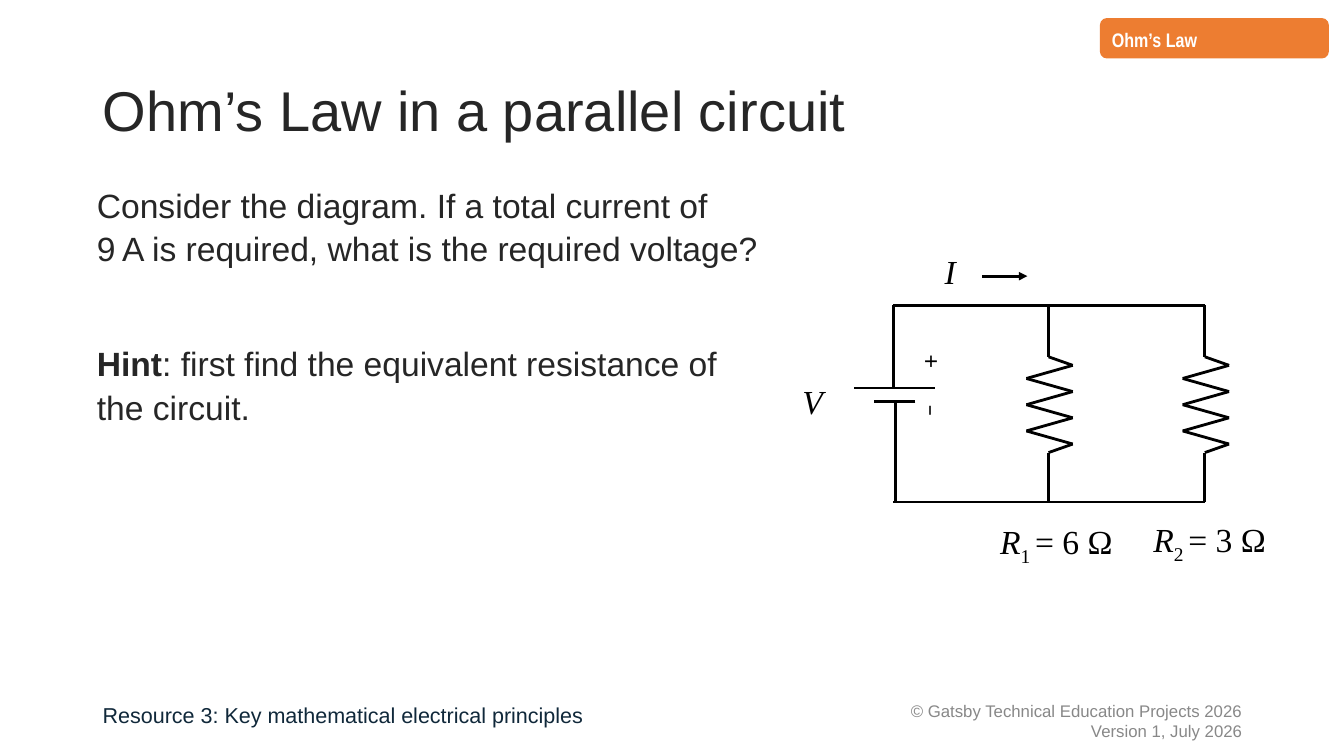
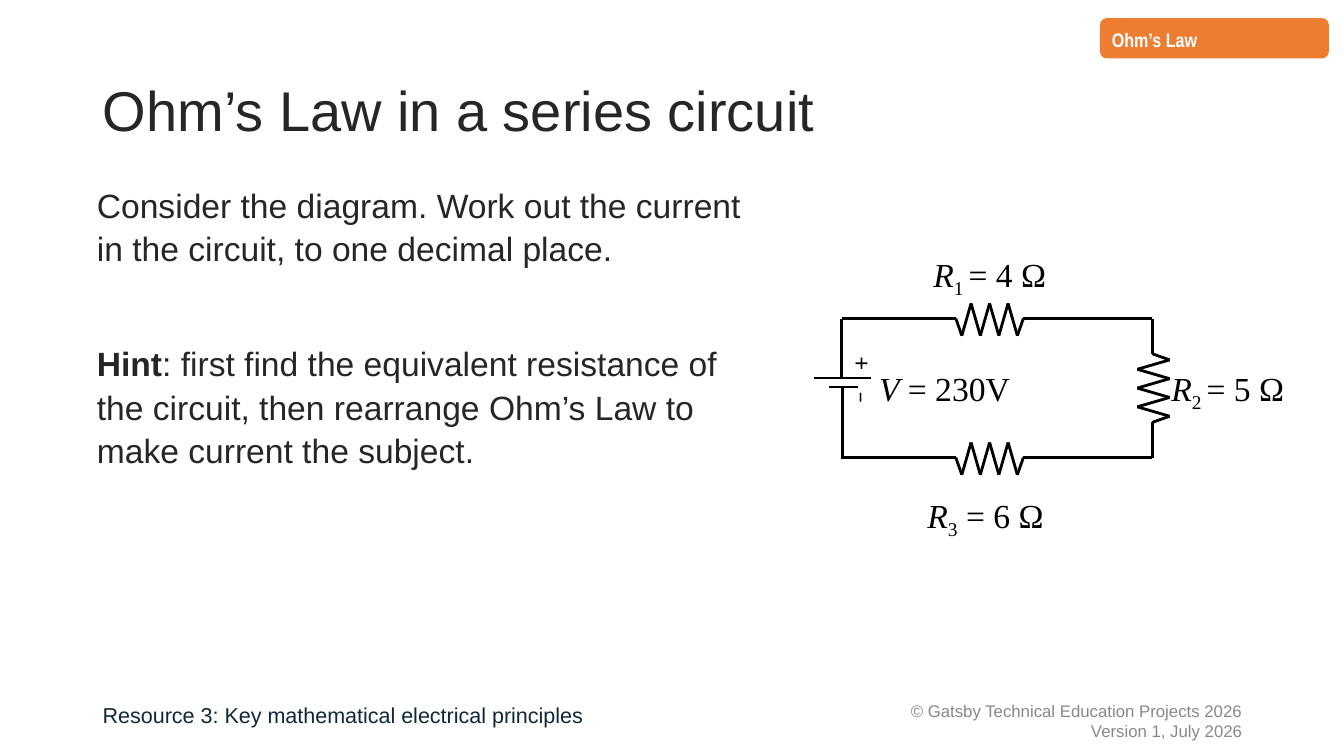
from itertools import pairwise

from lxml import etree
from pptx import Presentation
from pptx.dml.color import RGBColor
from pptx.enum.shapes import MSO_CONNECTOR, MSO_SHAPE
from pptx.enum.text import MSO_ANCHOR, MSO_AUTO_SIZE, PP_ALIGN
from pptx.oxml.ns import qn
from pptx.util import Inches, Pt

# Shared style
INK = RGBColor(0x26, 0x26, 0x26)
BLACK = RGBColor(0, 0, 0)
WHITE = RGBColor(0xFF, 0xFF, 0xFF)
ORANGE = RGBColor(0xED, 0x7D, 0x31)
NAVY = RGBColor(0x10, 0x28, 0x3A)
GREY = RGBColor(0x88, 0x88, 0x88)
SANS, NARROW, SERIF, SIGN_FONT = "Arial", "Arial Narrow", "Times New Roman", "Calibri"
LINE_WIDTH = Pt(2)
THIN_SPACE = chr(0x202F)  # narrow no-break space between number and unit

STRAIGHT = MSO_CONNECTOR.STRAIGHT
TAG_SHAPE = MSO_SHAPE.FLOWCHART_ALTERNATE_PROCESS
LEFT, RIGHT = PP_ALIGN.LEFT, PP_ALIGN.RIGHT
TOP, MIDDLE = MSO_ANCHOR.TOP, MSO_ANCHOR.MIDDLE
FIXED, GROW = MSO_AUTO_SIZE.NONE, MSO_AUTO_SIZE.SHAPE_TO_FIT_TEXT


# Text helpers
def place(shape, left, top, width, height):
    shape.left, shape.top = Inches(left), Inches(top)
    shape.width, shape.height = Inches(width), Inches(height)


def set_font(paragraph, name, size, color, bold=None):
    font = paragraph.font
    font.name, font.size, font.bold = name, Pt(size), bold
    font.color.rgb = color


def set_frame(shape, anchor=TOP, wrap=True, auto_size=FIXED):
    frame = shape.text_frame
    frame.auto_size, frame.word_wrap = auto_size, wrap
    frame.vertical_anchor = anchor
    return frame


def add_text(page, left, top, width, height, **frame_options):
    box = page.shapes.add_textbox(Inches(left), Inches(top), Inches(width), Inches(height))
    return box, set_frame(box, **frame_options)


# Parts that both pages share
def add_copyright(page):
    _, frame = add_text(page, 7.92, 6.95, 4.5, 0.4, anchor=MIDDLE)
    frame.text = "© Gatsby Technical Education Projects 2026\nVersion 1, July 2026"
    for paragraph in frame.paragraphs:
        paragraph.alignment = RIGHT
        set_font(paragraph, SANS, 12, GREY)


def add_resource_name(page):
    _, frame = add_text(page, 0.92, 6.95, 5.15, 0.4)
    paragraph = frame.paragraphs[0]
    paragraph.text = "Resource 3: Key mathematical electrical principles"
    paragraph.line_spacing = 0.88
    set_font(paragraph, SANS, 15.4, NAVY)


def add_tag(page):
    tag = page.shapes.add_shape(TAG_SHAPE, Inches(10.91), Inches(0.18), Inches(2.27), Inches(0.4))
    tag.shadow.inherit = False
    tag.fill.solid()
    tag.fill.fore_color.rgb = ORANGE
    tag.line.fill.background()
    paragraph = set_frame(tag, anchor=MIDDLE).paragraphs[0]
    paragraph.text = "Ohm’s Law"
    paragraph.alignment = LEFT
    paragraph.line_spacing = 1.08
    set_font(paragraph, NARROW, 14, WHITE, bold=True)


def set_title(page, text):
    title = page.shapes.title
    place(title, 0.92, 0.4, 11.5, 1.45)
    paragraph = set_frame(title, anchor=MIDDLE).paragraphs[0]
    paragraph.text = text
    paragraph.alignment = LEFT
    paragraph.line_spacing = 0.9
    set_font(paragraph, SANS, 40, INK)


def set_body(page, question, hint):
    body = page.placeholders[1]
    place(body, 0.64, 1.6, 7.11, 4.9)
    frame = set_frame(body)
    frame.margin_left = frame.margin_right = Inches(0.2)
    frame.margin_top = frame.margin_bottom = Inches(0.2)
    first = frame.paragraphs[0]
    first.text = question
    second = frame.add_paragraph()
    for text, bold in (("Hint", True), (": " + hint, False)):
        span = second.add_run()
        span.text = text
        span.font.bold = bold
    for paragraph, space in ((first, 0), (second, 51)):
        paragraph.line_spacing = 1.08
        paragraph.space_before = Pt(space)
        properties = paragraph._p.get_or_add_pPr()
        properties.set("marL", str(Inches(0.12)))
        properties.set("indent", "0")
        etree.SubElement(properties, qn("a:buNone"))
        set_font(paragraph, SANS, 24, INK)


def add_page(deck, title, question, hint):
    page = deck.slides.add_slide(deck.slide_layouts[1])
    add_copyright(page)
    set_title(page, title)
    set_body(page, question, hint)
    add_resource_name(page)
    add_tag(page)
    return page


# Circuit parts
def add_wire(page, start_x, start_y, end_x, end_y, arrow=False):
    wire = page.shapes.add_connector(
        STRAIGHT, Inches(start_x), Inches(start_y), Inches(end_x), Inches(end_y))
    wire.line.color.rgb = BLACK
    wire.line.width = LINE_WIDTH
    if arrow:
        etree.SubElement(wire.line._get_or_add_ln(), qn("a:tailEnd"), type="triangle")
    etree.SubElement(wire._element.spPr, qn("a:effectLst"))


def add_wires(page, wires):
    for ends in wires:
        add_wire(page, *ends)


def add_resistor(page, x, y, length, reach, vertical):
    """Zigzag of seven peaks that starts at x, y and runs down or to the right."""
    pitch = length / 7.3
    peaks = [((0.65 + i) * pitch, 0.01 + (-reach if i % 2 else reach)) for i in range(7)]
    points = []
    for along, across in [(0, 0), *peaks, (length, 0)]:
        step_x, step_y = (across, along) if vertical else (along, across)
        points.append((x + step_x, y + step_y))
    for start, end in pairwise(points):
        add_wire(page, *start, *end)


def add_sign(page, text, left, top, width, height):
    box, frame = add_text(page, left, top, width, height, wrap=False, auto_size=GROW)
    box.rotation = 90
    frame.text = text
    set_font(frame.paragraphs[0], SIGN_FONT, 18, BLACK)


def add_label(page, left, top, width, symbol, subscript="", value=""):
    _, frame = add_text(page, left, top, width, 0.5, wrap=False, auto_size=GROW)
    paragraph = frame.paragraphs[0]
    set_font(paragraph, SERIF, 24, BLACK)
    for text, italic, baseline in ((symbol, True, 0), (subscript, False, -25000),
                                   (value, False, 0)):
        if text:
            span = paragraph.add_run()
            span.text = text
            span.font.italic = italic
            if baseline:
                span._r.get_or_add_rPr().set("baseline", str(baseline))


# Circuits
def draw_parallel_circuit(page):
    columns, top, bottom = (8.86, 10.4, 11.95), 3.03, 4.98
    cell_x, *branches = columns
    resistor_top, resistor_length = 3.54, 0.95
    add_wires(page, [
        (cell_x, top, cell_x, 3.85),
        (8.88, 3.98, 8.88, bottom),
        (9.27, 3.85, 8.47, 3.85),
        (9.08, 3.98, 8.67, 3.98),
    ])
    for left, right in pairwise(columns):
        add_wire(page, left, top, right, top)
        add_wire(page, left, bottom, right, bottom)
    for x in branches:
        add_wire(page, x, top, x, resistor_top)
        add_resistor(page, x, resistor_top, resistor_length, 0.23, vertical=True)
        add_wire(page, x, resistor_top + resistor_length, x, bottom)
    add_sign(page, "+", 8.94, 3.37, 0.46, 0.57)
    add_sign(page, "–", 8.94, 3.86, 0.46, 0.57)
    add_label(page, 7.86, 3.73, 0.41, "V")
    add_label(page, 9.27, 2.44, 0.31, "I")
    add_wire(page, 9.74, 2.74, 10.19, 2.74, arrow=True)
    add_label(page, 9.82, 5.12, 1.4, "R", "1 ", "= 6 Ω")
    add_label(page, 11.34, 5.1, 1.4, "R", "2 ", "= 3 Ω")


def draw_series_circuit(page):
    left, right, top, bottom = 8.35, 11.43, 3.16, 4.54
    resistor_left, resistor_right, resistor_top, resistor_bottom = 9.48, 10.15, 3.51, 4.19
    lead, reach, side = 0.35, 0.16, 0.94
    add_wires(page, [
        (left, top, left, 3.75),
        (8.36, 3.84, 8.36, 4.55),
        (8.64, 3.75, 8.07, 3.75),
        (8.51, 3.84, 8.22, 3.84),
        (right, top, right, resistor_top),
        (right, resistor_bottom, right, bottom),
    ])
    add_resistor(page, right, resistor_top, resistor_bottom - resistor_top, reach, vertical=True)
    for y in (top, bottom):
        add_wires(page, [
            (left, y, left + side, y),
            (resistor_left, y, resistor_left - lead, y),
            (resistor_right + lead, y, resistor_right, y),
            (right - side, y, right, y),
        ])
        add_resistor(page, resistor_left, y, resistor_right - resistor_left, reach, vertical=False)
    add_sign(page, "+", 8.4, 3.41, 0.33, 0.4)
    add_sign(page, "–", 8.4, 3.75, 0.33, 0.4)
    add_label(page, 8.62, 3.6, 1.56, "V", value=" = 230V")
    add_label(page, 9.16, 2.47, 1.4, "R", "1 ", "= 4 Ω")
    add_label(page, 11.52, 3.6, 1.4, "R", "2 ", "= 5 Ω")
    add_label(page, 9.1, 4.86, 1.42, "R", "3", " = 6 Ω")


def main():
    deck = Presentation()
    deck.slide_width, deck.slide_height = Inches(13.33), Inches(7.5)

    parallel = add_page(
        deck, "Ohm’s Law in a parallel circuit",
        "Consider the diagram. If a total current of \v"
        f"9{THIN_SPACE}A is required, what is the required voltage?",
        "first find the equivalent resistance of the circuit.")
    draw_parallel_circuit(parallel)

    series = add_page(
        deck, "Ohm’s Law in a series circuit",
        "Consider the diagram. Work out the current in the circuit, to one decimal place.",
        "first find the equivalent resistance of the circuit, then rearrange "
        "Ohm’s Law to make current the subject.")
    draw_series_circuit(series)

    deck.save("out.pptx")


if __name__ == "__main__":
    main()
